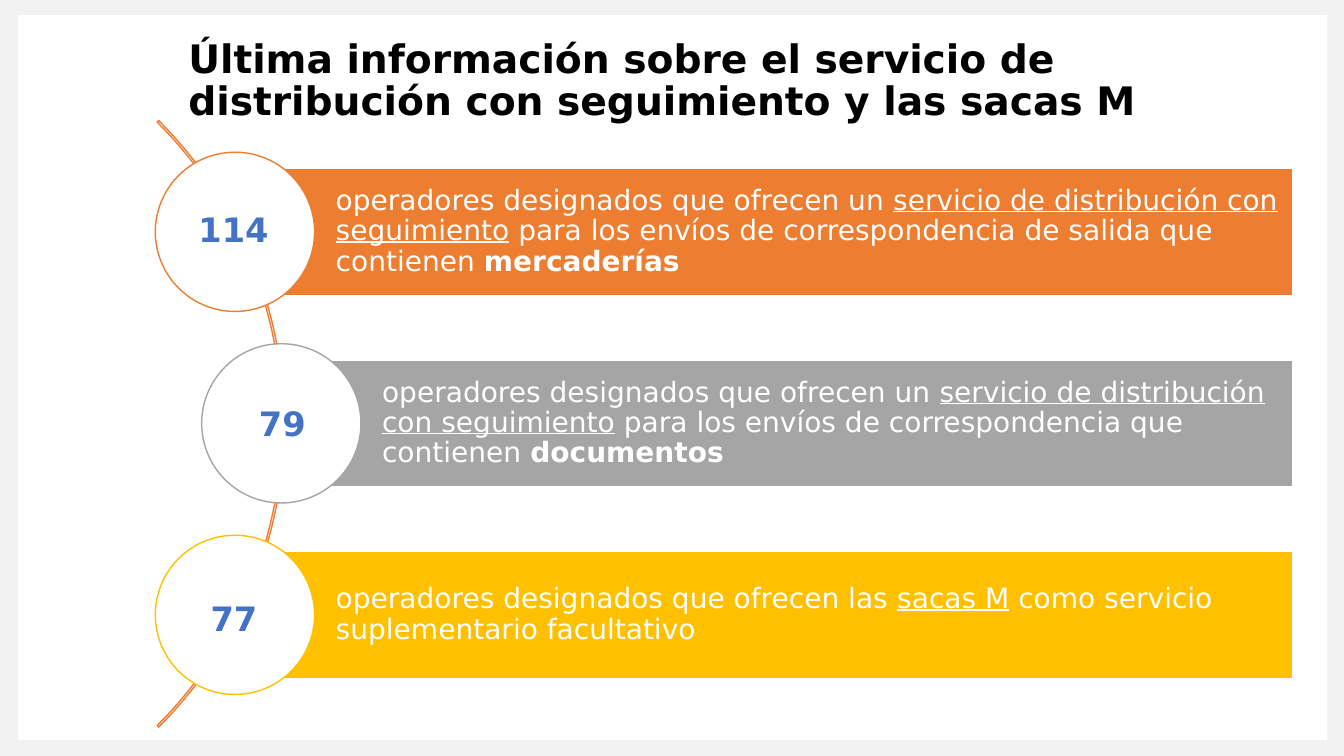
from dataclasses import dataclass

from pptx import Presentation
from pptx.dml.color import RGBColor
from pptx.enum.shapes import MSO_SHAPE
from pptx.enum.text import MSO_ANCHOR, PP_ALIGN
from pptx.util import Inches, Pt

RECT, OVAL, ARC = MSO_SHAPE.RECTANGLE, MSO_SHAPE.OVAL, MSO_SHAPE.BLOCK_ARC
TOP, MIDDLE = MSO_ANCHOR.TOP, MSO_ANCHOR.MIDDLE
LEFT, CENTER = PP_ALIGN.LEFT, PP_ALIGN.CENTER


@dataclass(frozen=True)
class Theme:
    """Colours, font and type sizes of the slide."""
    font: str = "DejaVu Sans"
    frame: str = "F2F2F2"
    white: str = "FFFFFF"
    black: str = "000000"
    orange: str = "ED7D31"
    grey: str = "A5A5A5"
    yellow: str = "FFC000"
    blue: str = "4472C4"
    title: int = 28
    figure: int = 24
    body: int = 20


THEME = Theme()
TITLE = "Última información sobre el servicio de distribución con seguimiento y las sacas M"
OFFER = "operadores designados que ofrecen "
TRACKED = "servicio de distribución con seguimiento"
UNDERLINE, BOLD = {"underline": True}, {"bold": True}
ROWS = [
    {"left": 1.54, "color": THEME.orange, "figure": "114",
     "label": (0.33, 0.51, 0.93, 0.5), "align": LEFT,
     "runs": [(OFFER + "un ", {}), (TRACKED, UNDERLINE),
              (" para los envíos de correspondencia de salida que contienen ", {}),
              ("mercaderías", BOLD)]},
    {"left": 2, "color": THEME.grey, "figure": "79",
     "label": (0.25, 0.54, 1.1, 0.5), "align": CENTER,
     "runs": [(OFFER + "un ", {}), (TRACKED, UNDERLINE),
              (" para los envíos de correspondencia que contienen ", {}),
              ("documentos", BOLD)]},
    {"left": 1.54, "color": THEME.yellow, "figure": "77",
     "label": (0.23, 0.57, 1.1, 0.5), "align": CENTER,
     "runs": [(OFFER + "las ", {}), ("sacas M", UNDERLINE),
              (" como servicio suplementario facultativo", {})]},
]


def add_shape(slide, kind, box, fill=None, line=None):
    """Add a preset shape with optional fill and one-point outline."""
    sp = slide.shapes.add_shape(kind, *map(Inches, box))
    sp.shadow.inherit = False
    if fill:
        sp.fill.solid()
        sp.fill.fore_color.rgb = RGBColor.from_string(fill)
    else:
        sp.fill.background()
    if line:
        sp.line.color.rgb = RGBColor.from_string(line)
        sp.line.width = Pt(1)
    else:
        sp.line.fill.background()
    return sp


def write(sp, runs, size, color, align=LEFT, anchor=TOP, spacing=None, insets=None):
    """Write one paragraph of formatted runs into a shape."""
    tf = sp.text_frame
    tf.word_wrap = True
    tf.vertical_anchor = anchor
    for side, inset in (insets or {}).items():
        setattr(tf, f"margin_{side}", Inches(inset))
    p = tf.paragraphs[0]
    p.alignment = align
    if spacing:
        p.line_spacing = spacing
    for text, formats in runs:
        r = p.add_run()
        r.text = text
        r.font.color.rgb = RGBColor.from_string(color)
        for name, value in {"name": THEME.font, "size": Pt(size), **formats}.items():
            setattr(r.font, name, value)


def add_background(slide, width, height):
    """Draw the pale frame and the white panel inside it."""
    add_shape(slide, RECT, (0, 0, width, height), THEME.frame)
    add_shape(slide, RECT, (0.18, 0.15, width - 0.35, height - 0.31), THEME.white)


def add_title(slide, box):
    """Write the slide title."""
    sp = slide.shapes.add_textbox(*map(Inches, box))
    write(sp, [(TITLE, BOLD)], THEME.title, THEME.black, spacing=0.9)


def add_arc(slide, box):
    """Draw the thin arc that links the circles."""
    sp = add_shape(slide, ARC, box, line=THEME.orange)
    for i, value in enumerate((189, 27, 0.0025)):
        sp.adjustments[i] = value


def add_row(slide, row, left, top, right, size=1.58):
    """Draw a bar with its text, and the circle with its figure."""
    bar_left = left + size / 2
    bar = add_shape(slide, RECT, (bar_left, top + 0.16, right - bar_left, 1.26),
                    row["color"], THEME.white)
    write(bar, row["runs"], THEME.body, THEME.white, anchor=MIDDLE, spacing=0.9,
          insets={"left": 1, "top": 0.06, "right": 0.06, "bottom": 0.06})
    add_shape(slide, OVAL, (left, top, size, size), THEME.white, row["color"])
    dx, dy, width, height = row["label"]
    label = slide.shapes.add_textbox(*map(Inches, (left + dx, top + dy, width, height)))
    write(label, [(row["figure"], BOLD)], THEME.figure, THEME.blue, row["align"])


def main():
    """Build the slide and save it."""
    width, height = 13.33, 7.5
    prs = Presentation()
    prs.slide_width, prs.slide_height = Inches(width), Inches(height)
    slide = prs.slides.add_slide(prs.slide_layouts[6])
    add_background(slide, width, height)
    add_title(slide, (1.77, 0.34, 10.92, 0.95))
    add_arc(slide, (-5.69, -0.05, 8.51, 8.51))
    for i, row in enumerate(ROWS):
        add_row(slide, row, row["left"], 1.51 + 1.9 * i, 12.82)
    prs.save("out.pptx")


if __name__ == "__main__":
    main()
